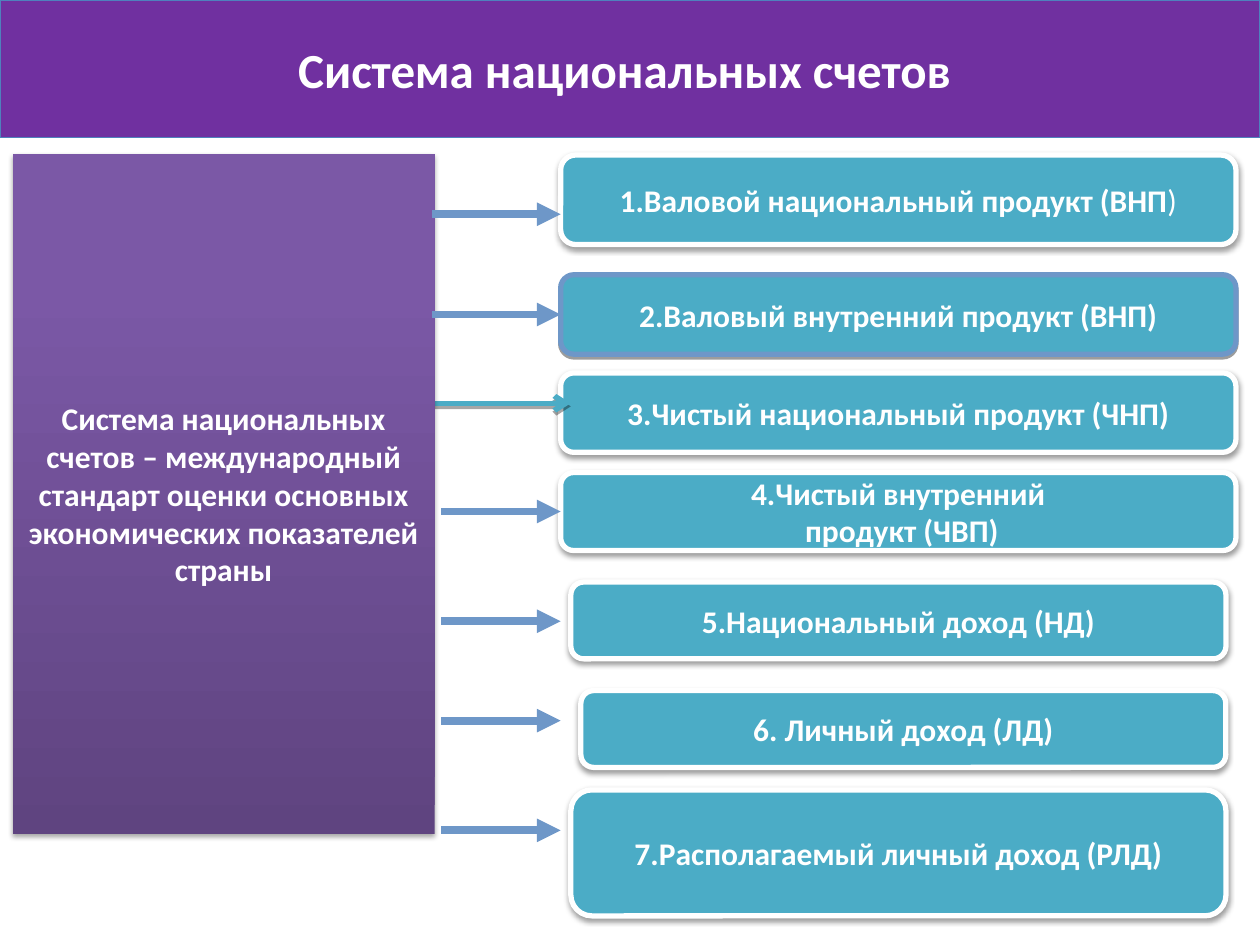
from dataclasses import dataclass

from lxml.etree import SubElement
from pptx import Presentation
from pptx.dml.color import RGBColor
from pptx.enum.shapes import MSO_CONNECTOR, MSO_SHAPE
from pptx.enum.text import MSO_ANCHOR, PP_ALIGN
from pptx.oxml.ns import qn
from pptx.util import Pt

WHITE = "FFFFFF"
TEAL = "4BACC6"
BLUE = "6E97C8"
PURPLE = "7030A0"
LEFT_SIDE = 1


@dataclass(frozen=True)
class Frame:
    left: float
    top: float
    width: float
    height: float


@dataclass(frozen=True)
class Indicator:
    lines: tuple[str, ...]
    frame: Frame
    outline: str = WHITE
    blur: float = 3.1
    plain_ending: str = ""


@dataclass(frozen=True)
class Arrow:
    start: float
    end: float
    height: float
    color: str = BLUE
    weight: float = 4.5
    head: str = "triangle"
    shadow: bool = False
    target: int | None = None


INDICATORS = (
    Indicator(("1.Валовой национальный продукт (ВНП",),
              Frame(320.4, 88.6, 385.9, 51.1), plain_ending=")"),
    Indicator(("2.Валовый внутренний продукт (ВНП)",),
              Frame(320.4, 157, 385.9, 45.4), outline=BLUE, blur=0),
    Indicator(("3.Чистый национальный продукт (ЧНП)",),
              Frame(320.4, 213.1, 385.9, 45.4)),
    Indicator(("4.Чистый внутренний", " продукт (ЧВП)"),
              Frame(320.4, 270, 385.9, 44.6)),
    Indicator(("5.Национальный доход (НД)",), Frame(326.2, 332.6, 374.4, 43.9)),
    Indicator(("6. Личный доход (ЛД)",), Frame(331.9, 394.6, 368.6, 43.9)),
    Indicator(("7.Располагаемый личный доход (РЛД)",),
              Frame(326.2, 451.4, 374.4, 72)),
)

THIN_ARROW = Arrow(247, 326.2, 230.4, TEAL, 3, "arrow", shadow=True)
ARROWS = (
    Arrow(247, 320.4, 122.4),
    Arrow(247, 320.4, 179.7, target=1),
    Arrow(252, 320.4, 292.3, target=3),
    Arrow(252, 320.4, 355),
    Arrow(252, 320.4, 411.8),
    Arrow(252, 320.4, 474.5),
)


def rgb(value: str) -> RGBColor:
    return RGBColor.from_string(value)


def add_span(para, text: str, *, size: float = 18, bold: bool = True,
             color: str = WHITE) -> None:
    para.alignment = PP_ALIGN.CENTER
    span = para.add_run()
    span.text = text
    span.font.name = "Calibri"
    span.font.size = Pt(size)
    span.font.bold = bold
    span.font.color.rgb = rgb(color)


def add_shadow(effects, blur: float, distance: float, opacity: int) -> None:
    shadow = SubElement(effects, qn("a:outerShdw"), blurRad=str(Pt(blur)),
                        dist=str(Pt(distance)), dir="5400000", rotWithShape="0")
    color = SubElement(shadow, qn("a:srgbClr"), val="000000")
    SubElement(color, qn("a:alpha"), val=str(opacity * 1000))


def add_box(page, kind: MSO_SHAPE, frame: Frame):
    box = page.shapes.add_shape(kind, Pt(frame.left), Pt(frame.top),
                                Pt(frame.width), Pt(frame.height))
    box.shadow.inherit = False
    box.text_frame.word_wrap = True
    box.text_frame.vertical_anchor = MSO_ANCHOR.MIDDLE
    return box


def add_indicator(page, indicator: Indicator):
    box = add_box(page, MSO_SHAPE.ROUNDED_RECTANGLE, indicator.frame)
    box.fill.solid()
    box.fill.fore_color.rgb = rgb(TEAL)
    box.line.color.rgb = rgb(indicator.outline)
    box.line.width = Pt(3)
    add_shadow(box._element.spPr.find(qn("a:effectLst")), indicator.blur, 1.6, 38)
    frame = box.text_frame
    for index, line in enumerate(indicator.lines):
        para = frame.add_paragraph() if index else frame.paragraphs[0]
        add_span(para, line)
    if indicator.plain_ending:
        add_span(para, indicator.plain_ending, bold=False)
    return box


def add_arrow(page, arrow: Arrow, boxes: list) -> None:
    connector = page.shapes.add_connector(
        MSO_CONNECTOR.STRAIGHT, Pt(arrow.start), Pt(arrow.height),
        Pt(arrow.end), Pt(arrow.height))
    if arrow.target is not None:
        connector.end_connect(boxes[arrow.target], LEFT_SIDE)
    connector.line.color.rgb = rgb(arrow.color)
    connector.line.width = Pt(arrow.weight)
    properties = connector._element.spPr
    SubElement(properties.find(qn("a:ln")), qn("a:tailEnd"), type=arrow.head)
    effects = SubElement(properties, qn("a:effectLst"))
    if arrow.shadow:
        add_shadow(effects, 0, 1.8, 35)


def add_definition(page) -> None:
    box = add_box(page, MSO_SHAPE.RECTANGLE, Frame(7.2, 87.8, 241.2, 388.8))
    box.fill.gradient()
    box.fill.gradient_angle = 90
    for stop, (position, color) in zip(box.fill.gradient_stops,
                                       ((0, "5F4480"), (0.8, "7B58A6"))):
        stop.position = position
        stop.color.rgb = rgb(color)
    box.line.fill.background()
    add_shadow(box._element.spPr.find(qn("a:effectLst")), 3.1, 1.8, 35)
    add_span(box.text_frame.paragraphs[0],
             "Система национальных счетов – международный стандарт оценки "
             "основных экономических показателей страны")


def add_title(page) -> None:
    box = add_box(page, MSO_SHAPE.RECTANGLE, Frame(0, 0, 720, 78.5))
    box.fill.solid()
    box.fill.fore_color.rgb = rgb(PURPLE)
    box.line.color.rgb = rgb("4F81BD")
    box.line.width = Pt(0.75)
    add_span(box.text_frame.paragraphs[0], "Система национальных счетов ", size=28)


def main() -> None:
    deck = Presentation()
    deck.slide_width, deck.slide_height = Pt(720), Pt(540)
    page = deck.slides.add_slide(deck.slide_layouts[6])
    boxes = [add_indicator(page, indicator) for indicator in INDICATORS]
    add_arrow(page, THIN_ARROW, boxes)
    add_definition(page)
    add_title(page)
    for arrow in ARROWS:
        add_arrow(page, arrow, boxes)
    deck.save("out.pptx")


if __name__ == "__main__":
    main()
